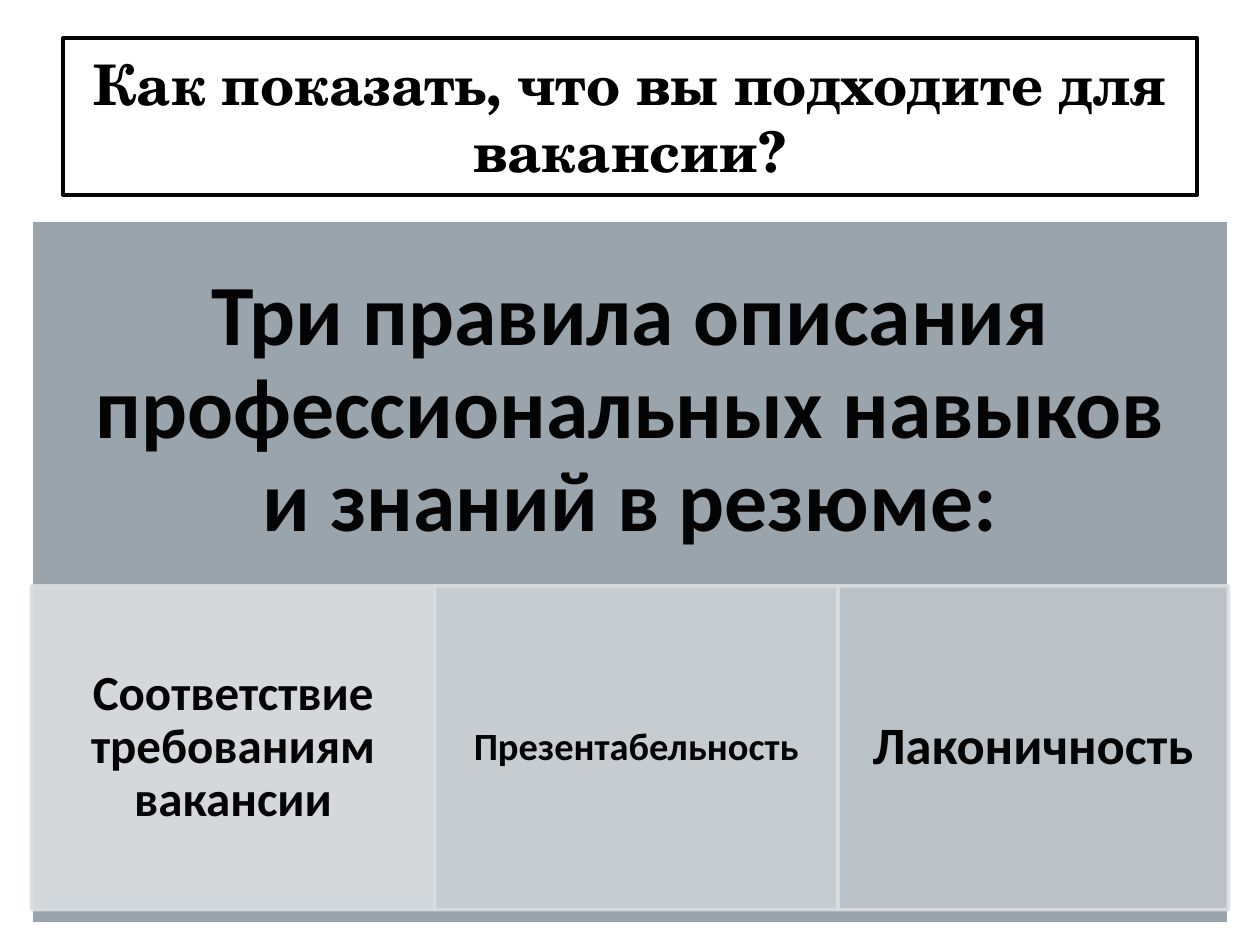
from pptx import Presentation
from pptx.dml.color import RGBColor
from pptx.enum.shapes import MSO_SHAPE as Shape
from pptx.enum.text import MSO_ANCHOR as Anchor, PP_ALIGN as Align
from pptx.oxml.ns import qn
from pptx.util import Pt
from lxml.etree import SubElement

PX = 9144
WHITE = RGBColor(0xFF, 0xFF, 0xFF)
BLACK = RGBColor(0, 0, 0)
INK = RGBColor(0x04, 0x04, 0x04)
SLATE = RGBColor(0x90, 0x9B, 0xA5)
MIST = RGBColor(0xDB, 0xDE, 0xE1)
RULES = [
    ("Соответствие требованиям вакансии", 320, 28, 22, 90),
    ("Презентабельность", 320, 22, 17, 70),
    ("Лаконичность", 310, 30, 23, 50),
]


def set_alpha(color_format, percent):
    """Make a solid fill partly transparent."""
    color = color_format.find(qn("a:solidFill")).find(qn("a:srgbClr"))
    SubElement(color, qn("a:alpha")).set("val", str(percent * 1000))


def paint(shape, fill, line):
    """Give a shape a solid fill and a 2 pt outline."""
    shape.fill.solid()
    shape.fill.fore_color.rgb = fill
    shape.line.color.rgb = line
    shape.line.width = Pt(2)


def write(shape, text, size, font, color):
    """Write one bold centred paragraph in the middle of a shape."""
    frame = shape.text_frame
    frame.word_wrap = True
    frame.vertical_anchor = Anchor.MIDDLE
    para = frame.paragraphs[0]
    para.text = text
    para.alignment = Align.CENTER
    para.font.name, para.font.size = font, Pt(size)
    para.font.bold = True
    para.font.color.rgb = color
    return para


def add_block(page, box, fill, alpha, line, text, size, insets):
    """Add a translucent rectangle with bold text inside the given insets."""
    block = page.shapes.add_shape(Shape.RECTANGLE, *(PX * n for n in box))
    block.shadow.inherit = False
    paint(block, fill, line)
    set_alpha(block.element.spPr, alpha)
    write(block, text, size, "Calibri", INK).line_spacing = 0.9
    frame = block.text_frame
    (frame.margin_left, frame.margin_top,
     frame.margin_right, frame.margin_bottom) = (PX * n for n in insets)
    return block


def add_title(page, box):
    """Place the framed title."""
    title = page.shapes.title
    title.left, title.top, title.width, title.height = (PX * n for n in box)
    paint(title, WHITE, INK)
    write(title, "Как показать, что вы подходите для вакансии?",
          32, "TeX Gyre Schola", BLACK)


def add_rules(page, box):
    """Place the panel with its heading and the row of three rules."""
    left, top, width, height = box
    heading_height, pad = 302, 38
    add_block(page, box, SLATE, 90, WHITE,
              "Три правила описания профессиональных навыков "
              "и знаний в резюме:", 49,
              (pad, pad, pad, height - heading_height + pad))
    for text, cell_width, size, side, alpha in RULES:
        cell = add_block(page, (left, top + 290, cell_width, 257), MIST, alpha,
                         MIST, text, size, (side, 4, side, 4))
        set_alpha(cell.element.spPr.find(qn("a:ln")), 90)
        left += cell_width


def main():
    """Build and save the deck."""
    deck = Presentation()
    deck.slide_width, deck.slide_height = 1000 * PX, 750 * PX
    page = deck.slides.add_slide(deck.slide_layouts[5])
    add_title(page, (50, 30, 900, 125))
    add_rules(page, (25, 175, 950, 558))
    deck.save("out.pptx")


if __name__ == "__main__":
    main()
